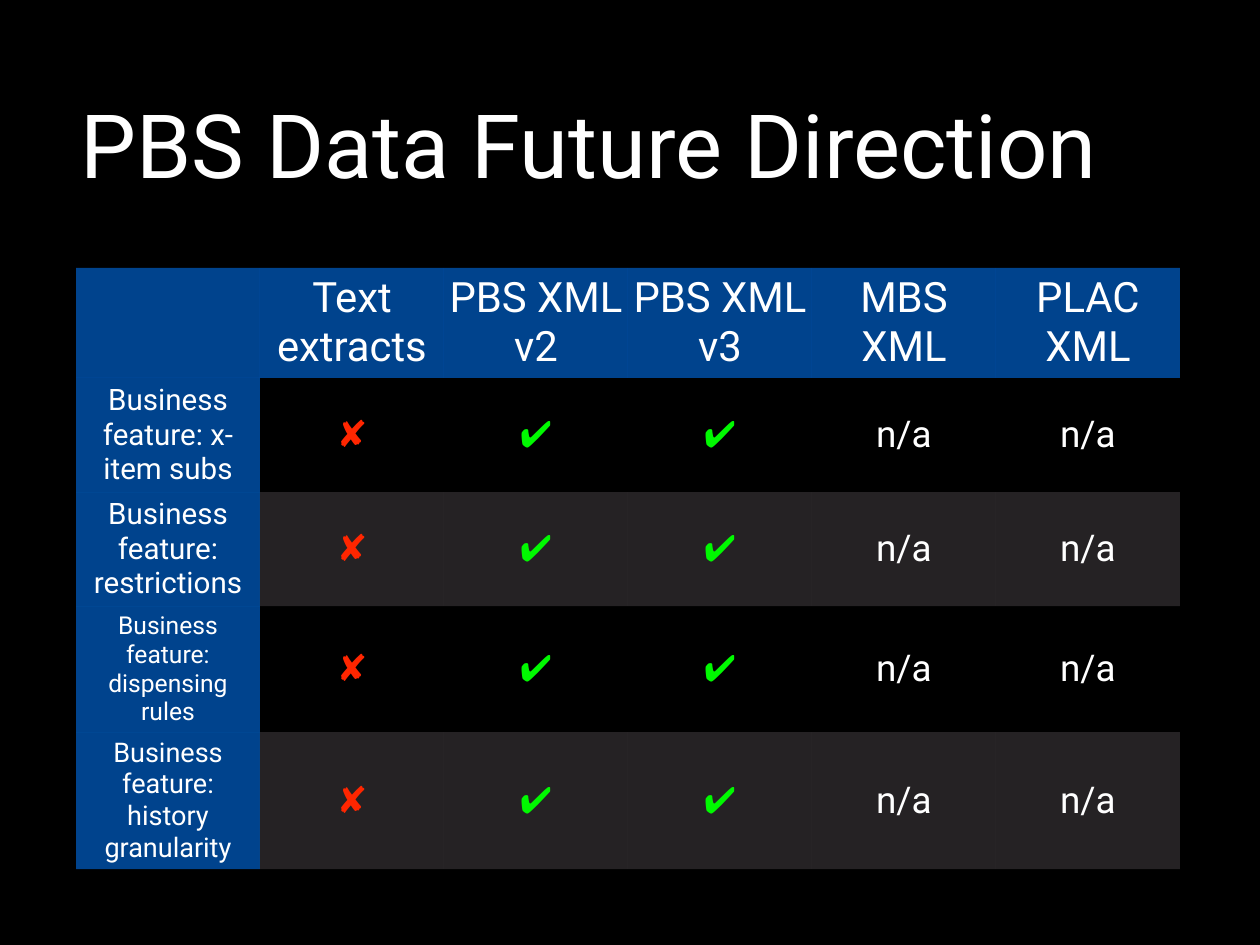
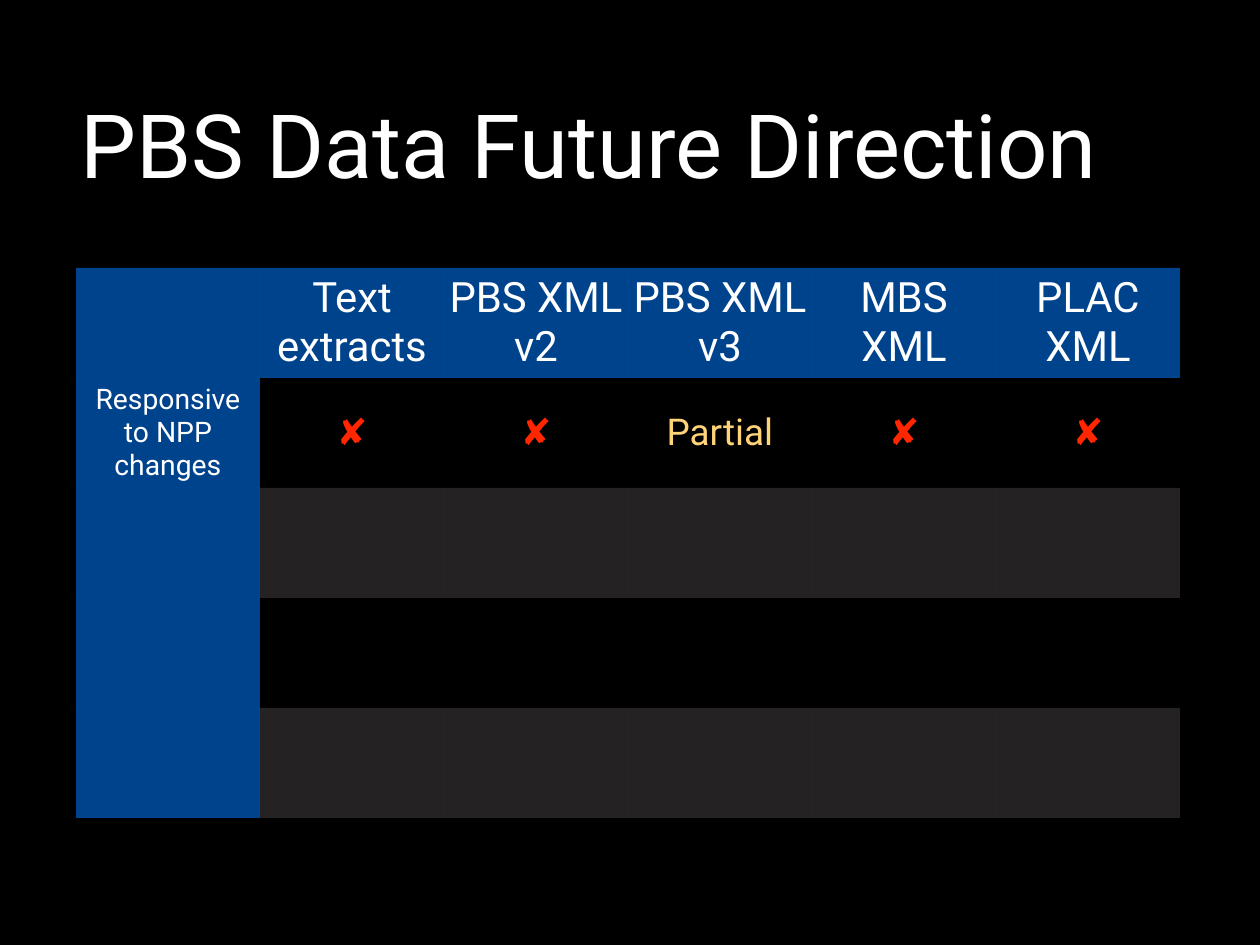
import pptx
import pptx.dml.color
import pptx.enum.text
import pptx.oxml.ns
import pptx.util
from lxml import etree

RGB = pptx.dml.color.RGBColor
BLACK = RGB(0x00, 0x00, 0x00)
WHITE = RGB(0xFF, 0xFF, 0xFF)
BLUE = RGB(0x00, 0x71, 0xEB)
GREY = RGB(0x67, 0x61, 0x64)
RED = RGB(0xFF, 0x26, 0x00)
GREEN = RGB(0x00, 0xF9, 0x00)
YELLOW = RGB(0xFF, 0xD4, 0x79)

PX = 10321  # EMU per px
INSET = 5 * PX
COL_W = 184 * PX
ROW_H = 110 * PX
NO_STYLE = "{2D5ABB26-0587-4C30-8999-92F81FD0307C}"
ALIGN = pptx.enum.text.PP_ALIGN
MIDDLE = pptx.enum.text.MSO_ANCHOR.MIDDLE

TITLE = "PBS Data Future Direction"
HEADERS = ["", "Text extracts", "PBS XML v2", "PBS XML v3", "MBS XML", "PLAC XML"]
CROSS, TICK, NA, PARTIAL = "✘", "✔︎", "n/a", "Partial"
MARK_COLORS = {CROSS: RED, TICK: GREEN, PARTIAL: YELLOW}

FEATURE_MARKS = [CROSS, TICK, TICK, NA, NA]
EMPTY_ROW = ("", 24, [""] * 5)
# Each row: label, label size, marks
TABLES = [
    [
        ("Business feature: x-item subs", 24, FEATURE_MARKS),
        ("Business feature: restrictions", 24, FEATURE_MARKS),
        ("Business feature: dispensing rules", 20, FEATURE_MARKS),
        ("Business feature: history granularity", 22, FEATURE_MARKS),
    ],
    [
        ("Responsive to NPP changes", 23, [CROSS, CROSS, PARTIAL, CROSS, CROSS]),
        EMPTY_ROW,
        EMPTY_ROW,
        EMPTY_ROW,
    ],
]


def write(tf, text, size, color=WHITE, align=ALIGN.CENTER):
    p = tf.paragraphs[0]
    p.alignment = align
    r = p.add_run()
    r.text = text
    r.font.name = "Roboto"
    r.font.size = pptx.util.Pt(size)
    r.font.color.rgb = color


def fill_cell(cell, color, opacity):
    """Fill a cell with a colour at an opacity in percent."""
    cell.fill.solid()
    cell.fill.fore_color.rgb = color
    srgb = next(cell._tc.tcPr.iter(pptx.oxml.ns.qn("a:srgbClr")))
    etree.SubElement(srgb, pptx.oxml.ns.qn("a:alpha"), val=str(opacity * 1000))


prs = pptx.Presentation()
prs.slide_width = 1260 * PX
prs.slide_height = 945 * PX

background = prs.slide_master.background.fill
background.solid()
background.fore_color.rgb = BLACK

layout = prs.slide_layouts.get_by_name("Title Only")
title = layout.placeholders[0]
title.left, title.top, title.width, title.height = 76 * PX, 25 * PX, 1107 * PX, 236 * PX

for rows in TABLES:
    s = prs.slides.add_slide(layout)
    tf = s.shapes.title.text_frame
    tf.auto_size = pptx.enum.text.MSO_AUTO_SIZE.NONE
    tf.vertical_anchor = MIDDLE
    tf.margin_left = tf.margin_right = tf.margin_top = tf.margin_bottom = INSET
    write(tf, TITLE, 72, align=ALIGN.LEFT)

    n_rows, n_cols = len(rows) + 1, len(HEADERS)
    frame = s.shapes.add_table(n_rows, n_cols, 76 * PX, 268 * PX,
                               n_cols * COL_W, n_rows * ROW_H)
    table = frame.table
    table.first_row = table.horz_banding = False
    table._tbl.tblPr.find(pptx.oxml.ns.qn("a:tableStyleId")).text = NO_STYLE
    for column in table.columns:
        column.width = COL_W

    grid = [[(text, 34, WHITE) for text in HEADERS]]
    for label, size, marks in rows:
        grid.append([(label, size, WHITE)]
                    + [(mark, 30, MARK_COLORS.get(mark, WHITE)) for mark in marks])

    for i, line in enumerate(grid):
        for j, (text, size, color) in enumerate(line):
            cell = table.cell(i, j)
            cell.vertical_anchor = MIDDLE
            cell.margin_left = cell.margin_right = INSET
            cell.margin_top = cell.margin_bottom = INSET
            if i == 0 or j == 0:
                fill_cell(cell, BLUE, 60)
            elif i % 2 == 0:
                fill_cell(cell, GREY, 36)
            else:
                cell.fill.background()
            if text:
                write(cell.text_frame, text, size, color)

prs.save("out.pptx")
